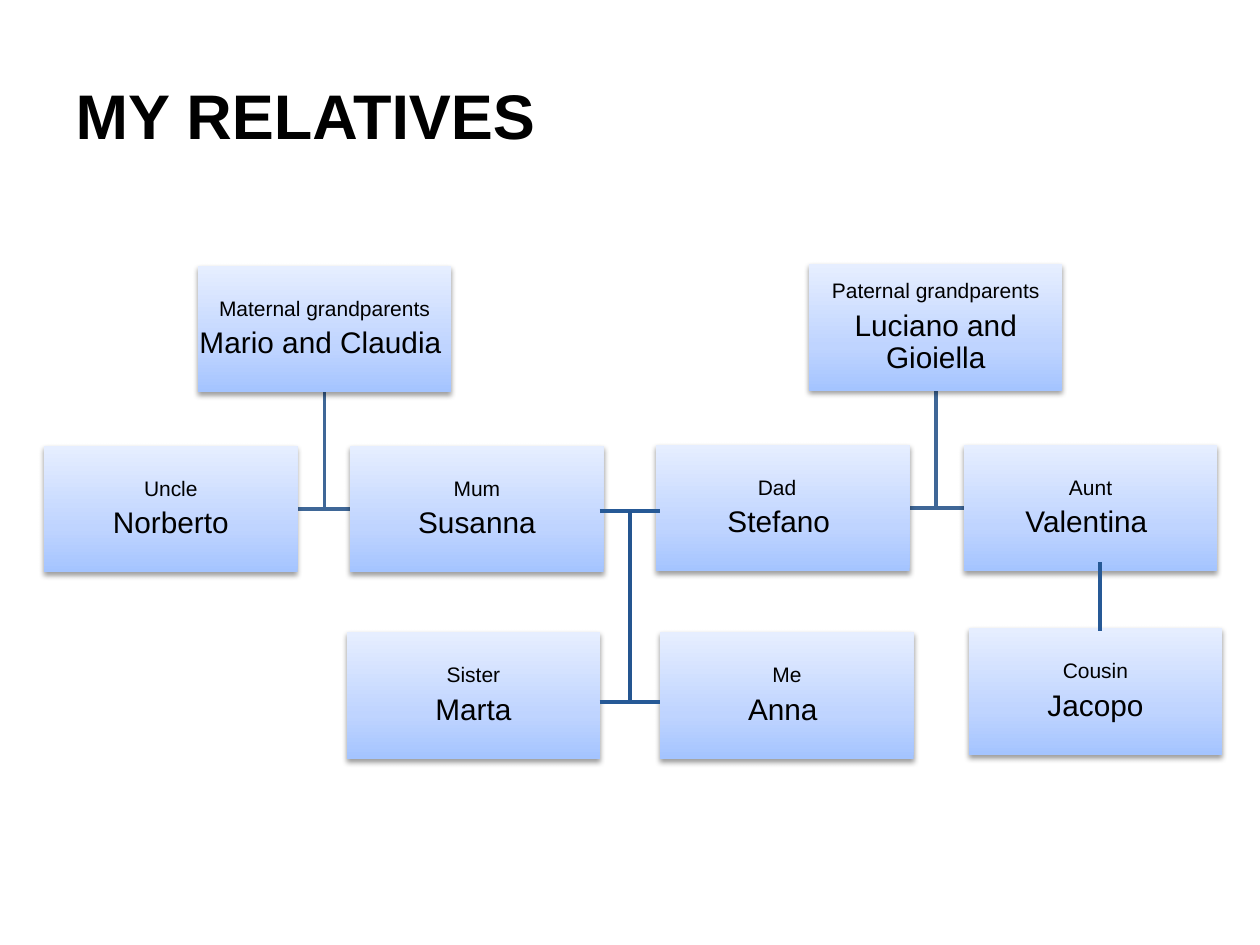
from lxml.etree import SubElement
from pptx import Presentation as Deck
from pptx.dml.color import RGBColor as Rgb
from pptx.enum.shapes import MSO_CONNECTOR as Link, MSO_SHAPE as Preset
from pptx.enum.text import MSO_ANCHOR as Anchor, PP_ALIGN as Align
from pptx.oxml.ns import qn
from pptx.util import Cm, Pt

COLORS = {
    "text": "000000", "branch": "3F6797", "link": "265996", "stem": "245590",
    "low": "A4C4FF", "middle": "BFD4FF", "high": "E6EEFF", "shadow": "000000",
}
GRADIENT = [(0, "low"), (35, "middle"), (100, "high")]
BOX_WIDTH, BOX_HEIGHT = 5.11, 2.55

BRANCHES = [
    (("Maternal grandparents", "Mario and Claudia ", 3.99, 5.36),
     [("Uncle", "Norberto", 0.89, 8.99), ("Mum", "Susanna", 7.06, 8.99)]),
    (("Paternal grandparents", "Luciano and Gioiella", 16.31, 5.33),
     [("Dad  ", "Stefano ", 13.23, 8.97), ("Aunt", "Valentina ", 19.43, 8.97)]),
]
YOUNGEST = [
    ("Sister", "Marta", 6.99, 12.75),
    ("Me", "Anna ", 13.31, 12.75),
    ("Cousin", "Jacopo", 19.53, 12.67),
]
LINKS = [
    (12.09, 10.31, 13.31, 10.31, "link"),
    (12.7, 10.31, 12.7, 14.12, "stem"),
    (12.09, 14.15, 13.31, 14.15, "link"),
    (22.17, 11.33, 22.17, 12.73, "link"),
]


def apply(target, values):
    """Set every attribute named in a dict of format values."""
    for name, value in values.items():
        setattr(target, name, value)


def add_span(para, text, size, bold=False):
    """Write one formatted run of text."""
    span = para.add_run()
    span.text = text
    apply(span.font, {"name": "Arial", "size": Pt(size), "bold": bold})
    span.font.color.rgb = Rgb.from_string(COLORS["text"])


def add_color(parent, color, **changes):
    """Add an XML colour with optional modifiers."""
    node = SubElement(parent, qn("a:srgbClr"), val=COLORS[color])
    for name, value in changes.items():
        SubElement(node, qn(f"a:{name}"), val=str(value))


def paint_box(box):
    """Give a box its upward gradient and soft shadow without an outline."""
    properties = box._element.spPr
    gradient = SubElement(properties, qn("a:gradFill"), rotWithShape="1")
    stops = SubElement(gradient, qn("a:gsLst"))
    for percent, color in GRADIENT:
        add_color(SubElement(stops, qn("a:gs"), pos=str(percent * 1000)), color)
    SubElement(gradient, qn("a:lin"), ang="16200000", scaled="0")
    box.line.fill.background()
    box.shadow.inherit = False
    shadow = SubElement(
        properties.find(qn("a:effectLst")), qn("a:outerShdw"),
        blurRad=str(Pt(3.1)), dist=str(Pt(1.6)), dir="5400000", rotWithShape="0")
    add_color(shadow, "shadow", alpha=38000)


def add_person(page, role, name, left, top, inset=0.03):
    """Add a relative's box with the role above the name."""
    box = page.shapes.add_shape(
        Preset.RECTANGLE, Cm(left), Cm(top), Cm(BOX_WIDTH), Cm(BOX_HEIGHT))
    paint_box(box)
    frame = box.text_frame
    apply(frame, {"word_wrap": True, "vertical_anchor": Anchor.MIDDLE})
    apply(frame, {f"margin_{side}": Cm(inset)
                  for side in ("left", "top", "right", "bottom")})
    for para, text, size in ((frame.paragraphs[0], role, 12),
                             (frame.add_paragraph(), name, 17)):
        apply(para, {"alignment": Align.CENTER, "line_spacing": 0.9,
                     "space_after": Pt(size * 0.35)})
        add_span(para, text, size)


def add_elbow(page, parent, child):
    """Draw a bent line from below a parent to the facing side of a child."""
    *_, left, top = parent
    *_, child_left, child_top = child
    middle = left + BOX_WIDTH / 2
    side = child_left if child_left > left else child_left + BOX_WIDTH
    level = Cm(child_top + BOX_HEIGHT / 2)
    outline = page.shapes.build_freeform(Cm(middle), Cm(top + BOX_HEIGHT))
    outline.add_line_segments([(Cm(middle), level), (Cm(side), level)], close=False)
    elbow = outline.convert_to_shape()
    elbow.fill.background()
    elbow.shadow.inherit = False
    elbow.line.width = Pt(2)
    elbow.line.color.rgb = Rgb.from_string(COLORS["branch"])


def add_link(page, x1, y1, x2, y2, color):
    """Draw a straight line without a shadow."""
    link = page.shapes.add_connector(Link.STRAIGHT, Cm(x1), Cm(y1), Cm(x2), Cm(y2))
    link.line.width = Pt(2.25)
    link.line.color.rgb = Rgb.from_string(COLORS[color])
    SubElement(link._element.spPr, qn("a:effectLst"))


def add_title(page, text):
    """Place and fill the title placeholder."""
    title = page.shapes.title
    apply(title, {"left": Cm(1.27), "top": Cm(1.32),
                  "width": Cm(22.86), "height": Cm(1.96)})
    title.text_frame.vertical_anchor = Anchor.MIDDLE
    para = title.text_frame.paragraphs[0]
    para.alignment = Align.LEFT
    add_span(para, text, 36, bold=True)


def main():
    """Build the family tree slide."""
    deck = Deck()
    apply(deck, {"slide_width": Cm(25.4), "slide_height": Cm(19.05)})
    page = deck.slides.add_slide(deck.slide_layouts[5])
    add_title(page, "MY RELATIVES")
    for parent, children in BRANCHES:
        for child in children:
            add_elbow(page, parent, child)
        for person in (parent, *children):
            add_person(page, *person)
    for person in YOUNGEST:
        add_person(page, *person, inset=0.13)
    for link in LINKS:
        add_link(page, *link)
    deck.save("out.pptx")


if __name__ == "__main__":
    main()
